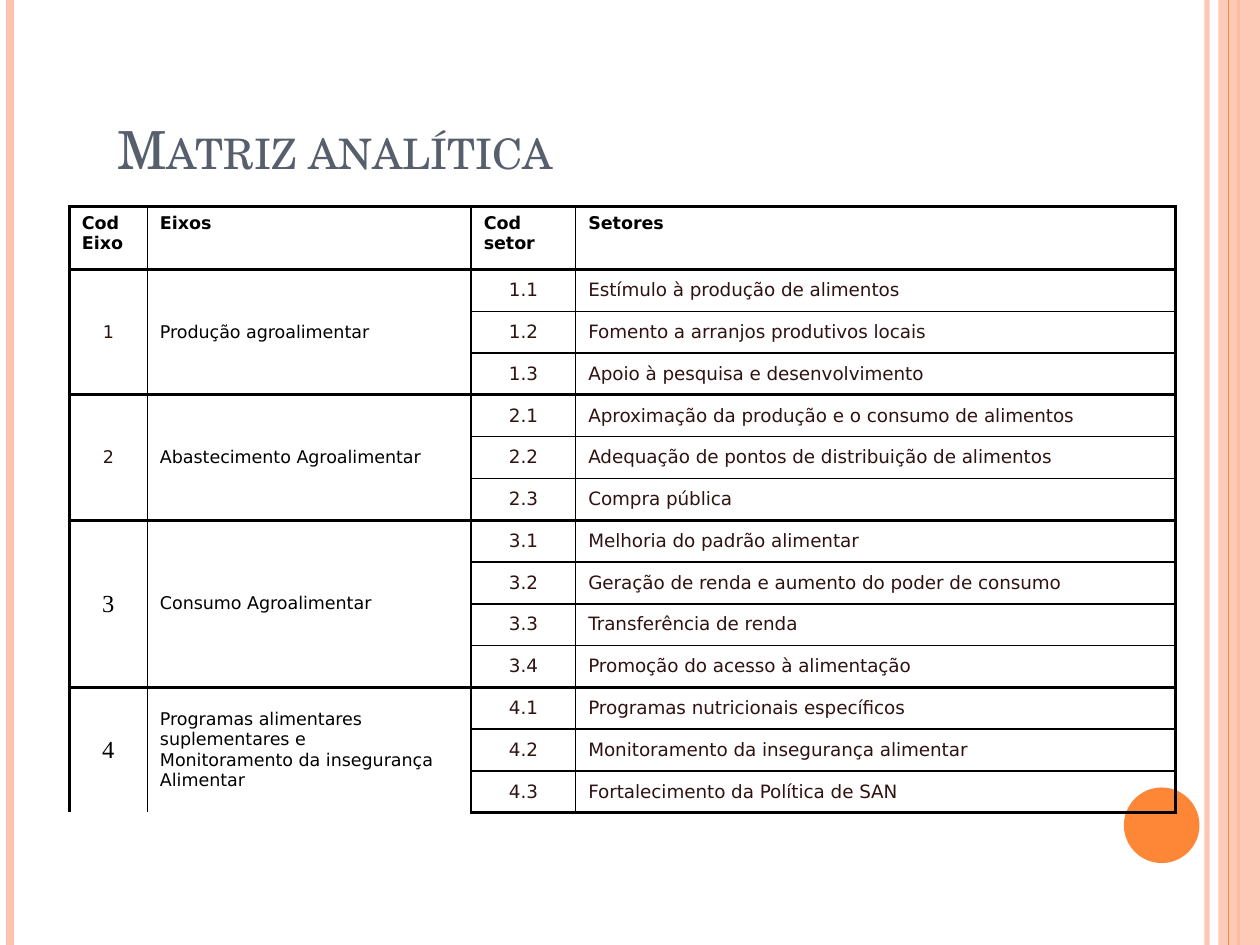
from dataclasses import dataclass

from lxml import etree
from pptx import Presentation
from pptx.dml.color import RGBColor
from pptx.enum.shapes import MSO_CONNECTOR, MSO_SHAPE
from pptx.enum.text import MSO_ANCHOR, PP_ALIGN
from pptx.oxml.ns import qn
from pptx.util import Inches, Pt

LEFT, CENTER, JUSTIFY = PP_ALIGN.LEFT, PP_ALIGN.CENTER, PP_ALIGN.JUSTIFY
TOP, MIDDLE, BOTTOM = MSO_ANCHOR.TOP, MSO_ANCHOR.MIDDLE, MSO_ANCHOR.BOTTOM
STRAIGHT = MSO_CONNECTOR.STRAIGHT
RECTANGLE, OVAL = MSO_SHAPE.RECTANGLE, MSO_SHAPE.OVAL


@dataclass(frozen=True)
class Theme:
    peach: str = "FEC3AE"
    orange: str = "FE8637"
    slate: str = "575F6D"
    black: str = "000000"
    brown: str = "2F1311"
    sans: str = "DejaVu Sans"
    serif: str = "TeX Gyre Schola"
    roman: str = "Times New Roman"
    title_size: float = 30
    axis_size: float = 10
    sector_size: float = 10.5
    large_code_size: float = 14
    thick: float = 2
    thin: float = 1


THEME = Theme()


@dataclass(frozen=True)
class TextStyle:
    size: float
    color: str
    font: str = THEME.sans
    bold: bool = False
    align: PP_ALIGN = LEFT
    anchor: MSO_ANCHOR = MIDDLE


HEADER = TextStyle(THEME.axis_size, THEME.black, bold=True, anchor=TOP)
AXIS_NAME = TextStyle(THEME.axis_size, THEME.black)
AXIS_CODE = TextStyle(THEME.axis_size, THEME.brown, align=CENTER)
LARGE_CODE = TextStyle(THEME.large_code_size, THEME.black, THEME.roman, align=CENTER)
SECTOR_CODE = TextStyle(THEME.sector_size, THEME.brown, align=CENTER)
SECTOR_NAME = TextStyle(THEME.sector_size, THEME.brown, align=JUSTIFY)


@dataclass(frozen=True)
class Stripe:
    x: float
    color: str
    width: float
    opacity: int = 100


@dataclass(frozen=True)
class Axis:
    name: str
    sectors: tuple[str, ...]
    code_style: TextStyle = AXIS_CODE


BACK_STRIPES = (
    Stripe(9.58, THEME.peach, 3, 93),
    Stripe(0.08, THEME.peach, 4.5),
    Stripe(9.83, THEME.orange, 1.5),
)
FRONT_STRIPE = Stripe(9.75, THEME.orange, 0.75)

HEADINGS = ("Cod\nEixo", "Eixos", "Cod\nsetor", "Setores")
AXES = (
    Axis("Produção agroalimentar", (
        "Estímulo à produção de alimentos",
        "Fomento a arranjos produtivos locais",
        "Apoio à pesquisa e desenvolvimento")),
    Axis("Abastecimento Agroalimentar", (
        "Aproximação da produção e o consumo de alimentos",
        "Adequação de pontos de distribuição de alimentos",
        "Compra pública")),
    Axis("Consumo Agroalimentar", (
        "Melhoria do padrão alimentar",
        "Geração de renda e aumento do poder de consumo",
        "Transferência de renda",
        "Promoção do acesso à alimentação"), LARGE_CODE),
    Axis("Programas alimentares\nsuplementares e\nMonitoramento da insegurança\nAlimentar", (
        "Programas nutricionais específicos",
        "Monitoramento da insegurança alimentar",
        "Fortalecimento da Política de SAN"), LARGE_CODE),
)

COLUMN_WIDTHS = (0.62, 2.57, 0.83, 4.76)
HEADER_HEIGHT = 0.5
TABLE_HEIGHT = 4.81
HANGING_INDENT = Inches(0.38)


def set_opacity(properties, percent: int) -> None:
    color = next(properties.iter(qn("a:srgbClr")))
    etree.SubElement(color, qn("a:alpha"), val=str(percent * 1000))


def draw_stripe(slide, stripe: Stripe, height: int) -> None:
    x = Inches(stripe.x)
    connector = slide.shapes.add_connector(STRAIGHT, x, 0, x, height)
    connector.line.color.rgb = RGBColor.from_string(stripe.color)
    connector.line.width = Pt(stripe.width)
    properties = connector.element.spPr
    if stripe.opacity < 100:
        set_opacity(properties, stripe.opacity)
    etree.SubElement(properties, qn("a:effectLst"))


def draw_solid(slide, preset: MSO_SHAPE, box: tuple[float, ...], color: str):
    solid = slide.shapes.add_shape(preset, *map(Inches, box))
    solid.shadow.inherit = False
    solid.fill.solid()
    solid.fill.fore_color.rgb = RGBColor.from_string(color)
    solid.line.fill.background()
    return solid


def format_font(font, style: TextStyle) -> None:
    formats = {"size": Pt(style.size), "name": style.font, "bold": style.bold}
    for attribute, value in formats.items():
        setattr(font, attribute, value)
    font.color.rgb = RGBColor.from_string(style.color)


def write_cell(cell, text: str, style: TextStyle) -> None:
    cell.text = text
    cell.vertical_anchor = style.anchor
    for paragraph in cell.text_frame.paragraphs:
        paragraph.alignment = style.align
        properties = paragraph._p.get_or_add_pPr()
        properties.set("marL", str(HANGING_INDENT))
        properties.set("indent", str(-HANGING_INDENT))
        format_font(paragraph.runs[0].font, style)


def draw_borders(cell, widths: dict[str, float]) -> None:
    properties = cell._tc.get_or_add_tcPr()
    for side, width in widths.items():
        border = etree.SubElement(properties, qn(f"a:ln{side}"), w=str(Pt(width)))
        fill = etree.SubElement(border, qn("a:solidFill"))
        etree.SubElement(fill, qn("a:srgbClr"), val=THEME.black)
    cell.fill.background()


def frame_group(table, first: int, last: int) -> None:
    """Thick lines round a group of rows, thin lines inside it."""
    last_column = len(COLUMN_WIDTHS) - 1
    for row in range(first, last + 1):
        for column in range(last_column + 1):
            widths = {
                "L": THEME.thick if column == 0 else THEME.thin,
                "R": THEME.thick if column == last_column else THEME.thin,
            }
            for side, edge in (("T", first), ("B", last)):
                if row == edge:
                    widths[side] = THEME.thick
                elif column >= 2:  # the axis columns are merged
                    widths[side] = THEME.thin
            draw_borders(table.cell(row, column), widths)


def draw_matrix(slide) -> None:
    sector_count = sum(len(axis.sectors) for axis in AXES)
    table = slide.shapes.add_table(
        sector_count + 1, len(COLUMN_WIDTHS), Inches(0.55), Inches(1.64),
        Inches(sum(COLUMN_WIDTHS)), Inches(TABLE_HEIGHT)).table
    table.first_row = table.horz_banding = False
    for column, width in zip(table.columns, COLUMN_WIDTHS):
        column.width = Inches(width)
    for row in table.rows:
        row.height = Inches((TABLE_HEIGHT - HEADER_HEIGHT) / sector_count)
    table.rows[0].height = Inches(HEADER_HEIGHT)

    # Header row
    for column, heading in enumerate(HEADINGS):
        write_cell(table.cell(0, column), heading, HEADER)
    frame_group(table, 0, 0)

    # One group of rows per axis
    first = 1
    for number, axis in enumerate(AXES, 1):
        last = first + len(axis.sectors) - 1
        for column in (0, 1):
            table.cell(first, column).merge(table.cell(last, column))
        write_cell(table.cell(first, 0), str(number), axis.code_style)
        write_cell(table.cell(first, 1), axis.name, AXIS_NAME)
        for offset, sector in enumerate(axis.sectors):
            write_cell(table.cell(first + offset, 2), f"{number}.{offset + 1}", SECTOR_CODE)
            write_cell(table.cell(first + offset, 3), sector, SECTOR_NAME)
        frame_group(table, first, last)
        first = last + 1


def draw_title(slide) -> None:
    title = slide.shapes.title
    box = {"left": 0.83, "top": 0.83, "width": 8.67, "height": 0.65}
    for attribute, value in box.items():
        setattr(title, attribute, Inches(value))
    title.text_frame.text = "Matriz analítica"
    title.text_frame.vertical_anchor = BOTTOM
    paragraph = title.text_frame.paragraphs[0]
    paragraph.alignment = LEFT
    font = paragraph.runs[0].font
    format_font(font, TextStyle(THEME.title_size, THEME.slate, THEME.serif))
    font._element.set("cap", "small")


def main() -> None:
    deck = Presentation()
    deck.slide_width, deck.slide_height = Inches(10), Inches(7.5)
    slide = deck.slides.add_slide(deck.slide_layouts[5])

    # Side decoration
    for stripe in BACK_STRIPES:
        draw_stripe(slide, stripe, deck.slide_height)
    band = draw_solid(slide, RECTANGLE, (9.67, 0, 0.33, 7.5), THEME.peach)
    set_opacity(band.element.spPr, 87)
    draw_stripe(slide, FRONT_STRIPE, deck.slide_height)
    draw_solid(slide, OVAL, (8.92, 6.25, 0.6, 0.6), THEME.orange)

    # Content
    draw_title(slide)
    draw_matrix(slide)
    deck.save("out.pptx")


if __name__ == "__main__":
    main()
